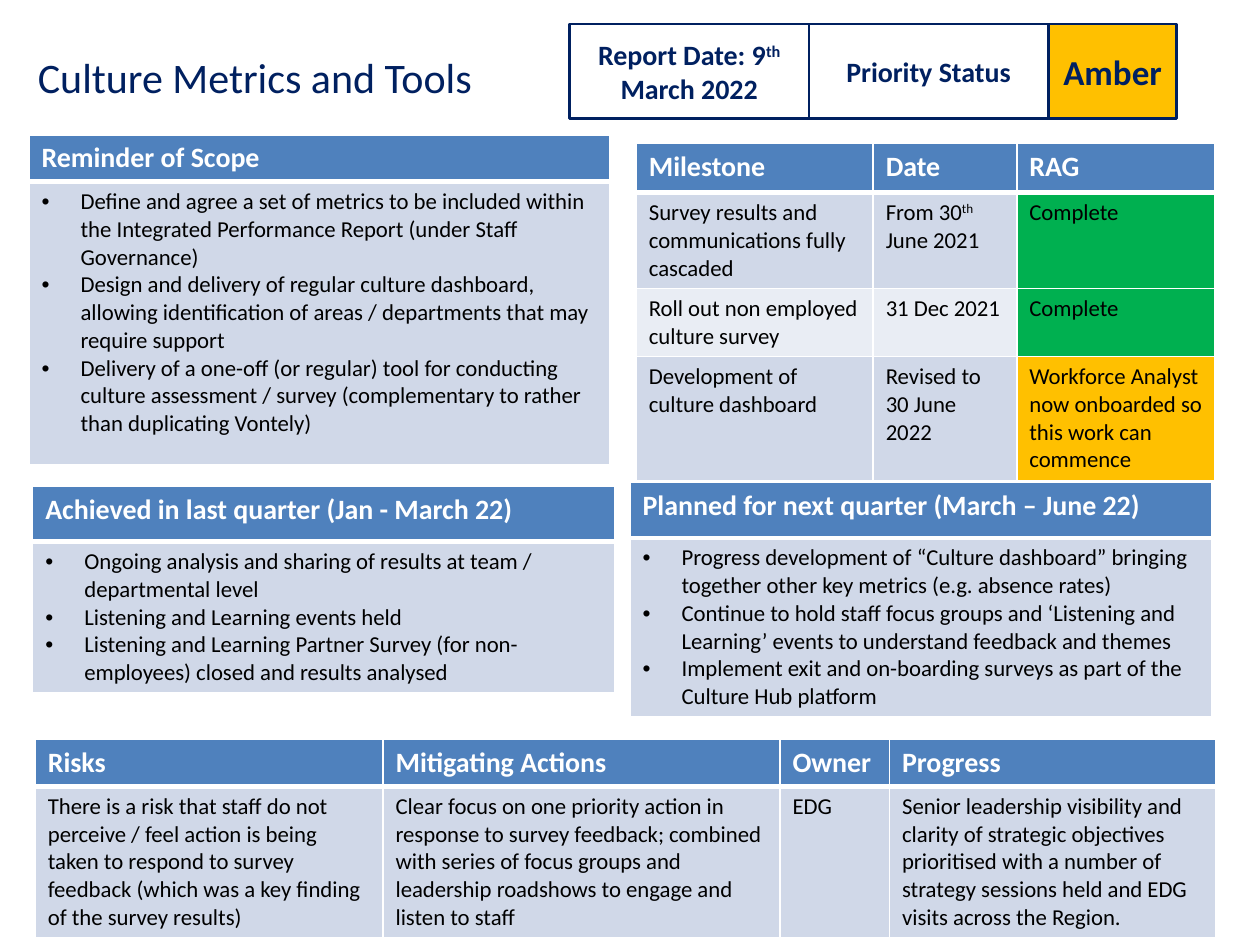
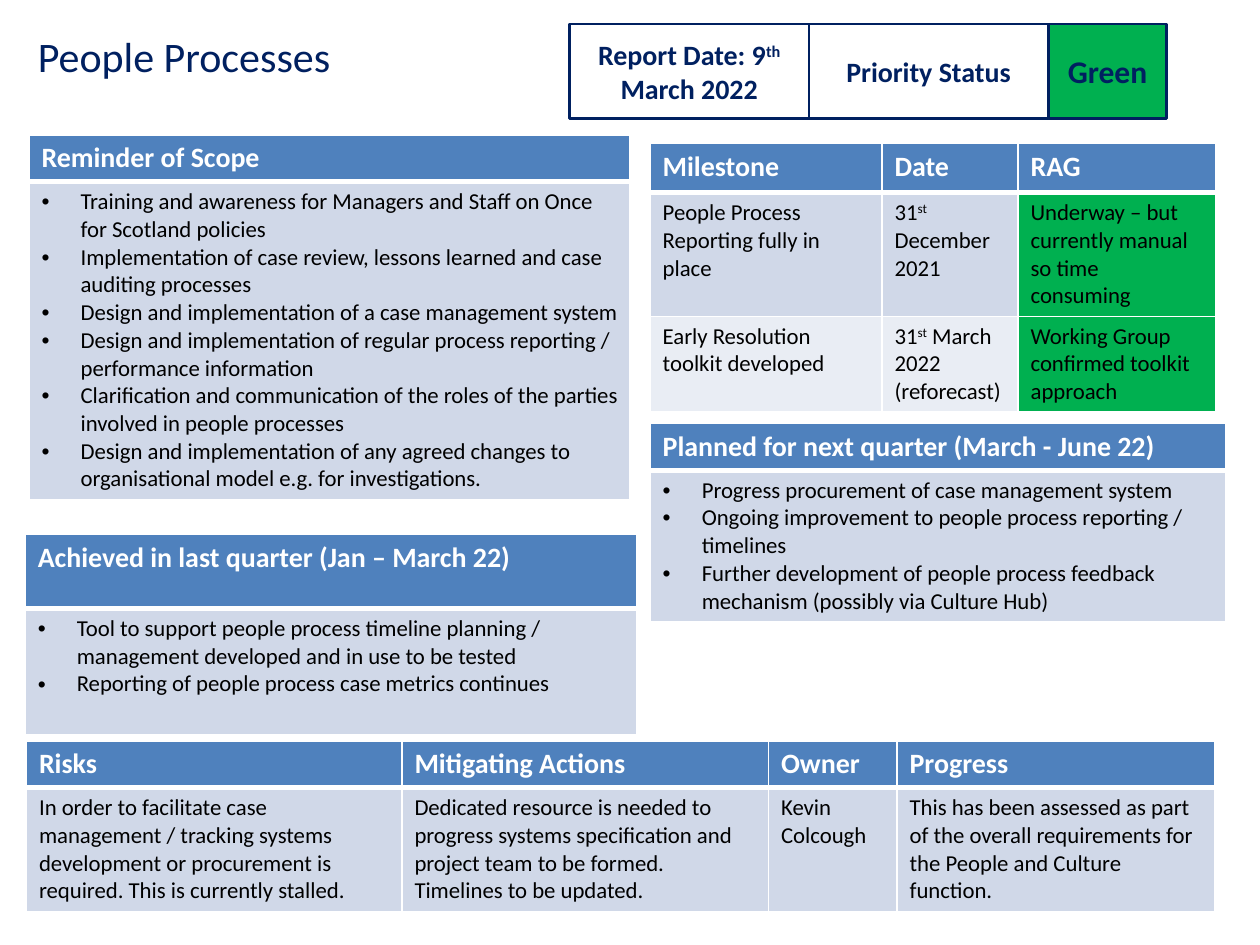
from pptx import Presentation
from pptx.dml.color import RGBColor
from pptx.enum.shapes import MSO_SHAPE as SHAPE
from pptx.enum.text import MSO_ANCHOR as ANCHOR, MSO_AUTO_SIZE as AUTO_SIZE, PP_ALIGN as ALIGN
from pptx.oxml.ns import qn
from pptx.util import Inches, Pt
from lxml.etree import SubElement

NAVY = RGBColor(0x00, 0x20, 0x60)
BLUE = RGBColor(0x4F, 0x81, 0xBD)
BANDS = (RGBColor(0xD0, 0xD8, 0xE8), RGBColor(0xE9, 0xED, 0xF4))
GREEN = RGBColor(0x00, 0xB0, 0x50)
AMBER = RGBColor(0xFF, 0xC0, 0x00)
WHITE = RGBColor(0xFF, 0xFF, 0xFF)
BLACK = RGBColor(0x00, 0x00, 0x00)
FONT = "Calibri"
TITLE_ONLY = 5
HEADER_H = 0.37
BULLET_INDENT = 0.31
REPORT_DATE = "Report Date: 9^th^ March 2022"


def write(p, text, size, color, bold=False):
    """Fill a paragraph with text, raising the parts between carets."""
    for i, part in enumerate(text.split("^")):
        r = p.add_run()
        r.text = part
        r.font.name, r.font.size, r.font.bold = FONT, Pt(size), bold
        r.font.color.rgb = color
        if i % 2:
            r.font._element.set("baseline", "30000")


def add_bullet(p):
    """Give a paragraph a hanging round bullet."""
    pPr = p._p.get_or_add_pPr()
    pPr.set("marL", str(Inches(BULLET_INDENT)))
    pPr.set("indent", str(-Inches(BULLET_INDENT)))
    SubElement(pPr, qn("a:buFont")).set("typeface", "Arial")
    SubElement(pPr, qn("a:buChar")).set("char", "•")


def set_borders(cell, top, bottom):
    """Draw white cell borders with the given top and bottom widths."""
    tcPr = cell._tc.get_or_add_tcPr()
    for side, width in (("L", 1), ("R", 1), ("T", top), ("B", bottom)):
        ln = SubElement(tcPr, qn(f"a:ln{side}"), w=str(Pt(width)))
        fill = SubElement(ln, qn("a:solidFill"))
        SubElement(fill, qn("a:srgbClr")).set("val", str(WHITE))


def fill_cell(cell, content, row, fill):
    """Format one header or body cell; a list becomes bullets."""
    set_borders(cell, 3 if row == 1 else 1, 3 if row == 0 else 1)
    cell.fill.solid()
    cell.fill.fore_color.rgb = fill
    tf = cell.text_frame
    bulleted = isinstance(content, list)
    for i, text in enumerate(content if bulleted else [content]):
        p = tf.add_paragraph() if i else tf.paragraphs[0]
        if bulleted:
            add_bullet(p)
        if row:
            write(p, text, 13, BLACK)
        else:
            write(p, text, 16, WHITE, True)


def add_grid(slide, left, top, widths, heights, rows, rag=()):
    """Add a banded table; rag colours the last column of the body rows."""
    frame = slide.shapes.add_table(len(rows), len(widths), Inches(left), Inches(top),
                                   Inches(sum(widths)), Inches(sum(heights)))
    table = frame.table
    for column, width in zip(table.columns, widths):
        column.width = Inches(width)
    for i, (height, row) in enumerate(zip(heights, rows)):
        table.rows[i].height = Inches(height)
        for j, content in enumerate(row):
            fill = BANDS[(i - 1) % 2] if i else BLUE
            if rag and i and j == len(row) - 1:
                fill = rag[i - 1]
            fill_cell(table.cell(i, j), content, i, fill)


def add_panel(slide, box, heading, bullets):
    """Add a headed list in box: left, top, width, header and body height."""
    left, top, width, *heights = box
    add_grid(slide, left, top, [width], heights, [[heading], [bullets]])


def add_milestones(slide, left, widths, heights, rows, rag):
    """Add the milestone table with its status colours."""
    header = ("Milestone", "Date", "RAG")
    add_grid(slide, left, 1.14, widths, [0.39, *heights], [header, *rows], rag)


def add_risks(slide, left, top, widths, height, row):
    """Add the risk table along the bottom."""
    header = ("Risks", "Mitigating Actions", "Owner", "Progress")
    add_grid(slide, left, top, widths, [HEADER_H, height], [header, row])


def add_title(slide, text, top):
    """Place and format the slide title."""
    sp = slide.shapes.title
    sp.left, sp.top, sp.width, sp.height = map(Inches, (0.2, top, 9.29, 0.5))
    tf = sp.text_frame
    tf.auto_size, tf.vertical_anchor = AUTO_SIZE.NONE, ANCHOR.TOP
    p = tf.paragraphs[0]
    p.alignment = ALIGN.LEFT
    write(p, text, 24, NAVY)


def add_status_bar(slide, status, color, size, width):
    """Add the date, label and status boxes side by side."""
    left = 4.52
    boxes = ((REPORT_DATE, None, 16, 1.9), ("Priority Status", None, 16, 1.9),
             (status, color, size, width))
    for text, fill, text_size, box_width in boxes:
        sp = slide.shapes.add_shape(SHAPE.RECTANGLE, Inches(left), Inches(0.19),
                                    Inches(box_width), Inches(0.75))
        sp.shadow.inherit = False
        if fill is None:
            sp.fill.background()
        else:
            sp.fill.solid()
            sp.fill.fore_color.rgb = fill
        sp.line.color.rgb, sp.line.width = NAVY, Pt(1.5)
        tf = sp.text_frame
        tf.word_wrap, tf.vertical_anchor = True, ANCHOR.MIDDLE
        p = tf.paragraphs[0]
        p.alignment = ALIGN.CENTER
        write(p, text, text_size, NAVY, True)
        left += box_width


def start_report(prs, title, title_top, status):
    """Add a slide with its title and status bar."""
    slide = prs.slides.add_slide(prs.slide_layouts[TITLE_ONLY])
    add_title(slide, title, title_top)
    add_status_bar(slide, *status)
    return slide


def build_culture(prs):
    """Build the culture metrics report."""
    slide = start_report(prs, "Culture Metrics and Tools", 0.36, ("Amber", AMBER, 20, 1.02))
    add_panel(slide, (0.23, 1.07, 4.61, HEADER_H, 2.25), "Reminder of Scope", [
        "Define and agree a set of metrics to be included within the Integrated "
        "Performance Report (under Staff Governance)",
        "Design and delivery of regular culture dashboard, allowing identification of "
        "areas / departments that may require support",
        "Delivery of a one-off (or regular) tool for conducting culture assessment / "
        "survey (complementary to rather than duplicating Vontely)",
    ])
    add_panel(slide, (0.26, 3.86, 4.62, 0.44, 1.18),
              "Achieved in last quarter (Jan - March 22)", [
        "Ongoing analysis and sharing of results at team / departmental level",
        "Listening and Learning events held",
        "Listening and Learning Partner Survey (for non-employees) closed and results analysed",
    ])
    add_panel(slide, (5, 3.83, 4.62, 0.44, 1.4),
              "Planned for next quarter (March – June 22)", [
        "Progress development of “Culture dashboard” bringing together other key "
        "metrics (e.g. absence rates)",
        "Continue to hold staff focus groups and ‘Listening and Learning’ events to "
        "understand feedback and themes",
        "Implement exit and on-boarding surveys as part of the Culture Hub platform",
    ])
    add_risks(slide, 0.28, 5.87, (2.76, 3.15, 0.87, 2.59), 1.18, (
        "There is a risk that staff do not perceive / feel action is being taken to "
        "respond to survey feedback (which was a key finding of the survey results)",
        "Clear focus on one priority action in response to survey feedback; combined with "
        "series of focus groups and leadership roadshows to engage and listen to staff",
        "EDG",
        "Senior leadership visibility and clarity of strategic objectives prioritised with "
        "a number of strategy sessions held and EDG visits across the Region.",
    ))
    add_milestones(slide, 5.05, (1.88, 1.14, 1.57), (0.75, 0.53, 0.97), (
        ("Survey results and communications fully cascaded", "From 30^th^ June 2021",
         "Complete"),
        ("Roll out non employed culture survey", "31 Dec 2021", "Complete"),
        ("Development of culture dashboard", "Revised to 30 June 2022",
         "Workforce Analyst now onboarded so this work can commence"),
    ), (GREEN, GREEN, AMBER))


def build_processes(prs):
    """Build the people processes report."""
    slide = start_report(prs, "People Processes", 0.19, ("Green", GREEN, 18, 0.94))
    add_panel(slide, (0.2, 4.24, 4.85, 0.59, 1),
              "Achieved in last quarter (Jan – March 22)", [
        "Tool to support people process timeline planning / management developed and in "
        "use to be tested",
        "Reporting of people process case metrics continues",
    ])
    add_panel(slide, (5.16, 3.36, 4.57, HEADER_H, 1.18),
              "Planned for next quarter (March - June 22)", [
        "Progress procurement of case management system",
        "Ongoing improvement to people process reporting / timelines",
        "Further development of people process feedback mechanism (possibly via Culture Hub)",
    ])
    add_risks(slide, 0.21, 5.88, (2.98, 2.91, 1.02, 2.52), 0.96, (
        "In order to facilitate case management / tracking systems development or "
        "procurement is required. This is currently stalled.",
        "Dedicated resource is needed to progress systems specification and project team "
        "to be formed. Timelines to be updated.",
        "Kevin Colcough",
        "This has been assessed as part of the overall requirements for the People and "
        "Culture function.",
    ))
    add_panel(slide, (0.23, 1.07, 4.77, HEADER_H, 2.48), "Reminder of Scope", [
        "Training and awareness for Managers and Staff on Once for Scotland policies",
        "Implementation of case review, lessons learned and case auditing processes",
        "Design and implementation of a case management system",
        "Design and implementation of regular process reporting / performance information",
        "Clarification and communication of the roles of the parties involved in people "
        "processes",
        "Design and implementation of any agreed changes to organisational model e.g. for "
        "investigations.",
    ])
    add_milestones(slide, 5.16, (1.84, 1.08, 1.57), (0.75, 0.75), (
        ("People Process Reporting fully in place", "31^st^ December 2021",
         "Underway – but currently manual so time consuming"),
        ("Early Resolution toolkit developed", "31^st^ March 2022 (reforecast)",
         "Working Group confirmed toolkit approach"),
    ), (GREEN, GREEN))


def main():
    """Build and save both reports."""
    prs = Presentation()
    prs.slide_width, prs.slide_height = Inches(10), Inches(7.5)
    build_culture(prs)
    build_processes(prs)
    prs.save("out.pptx")


if __name__ == "__main__":
    main()
